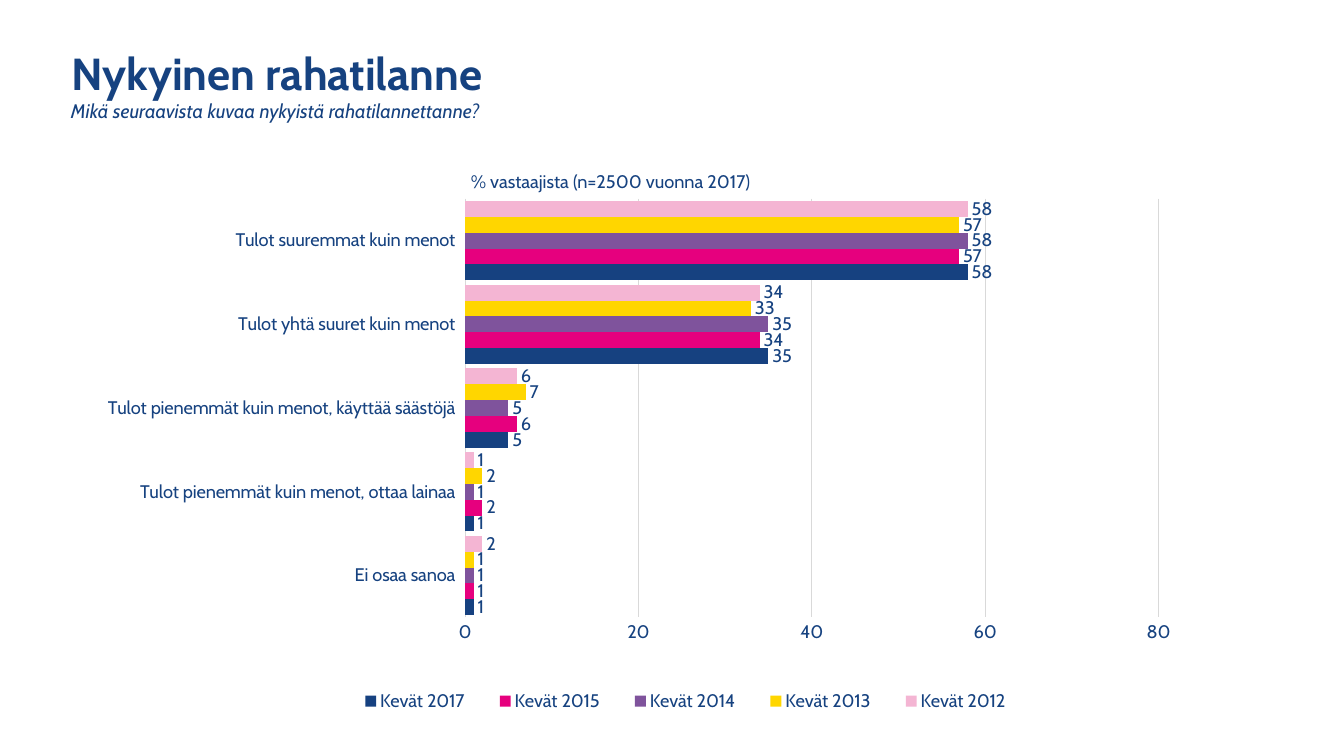
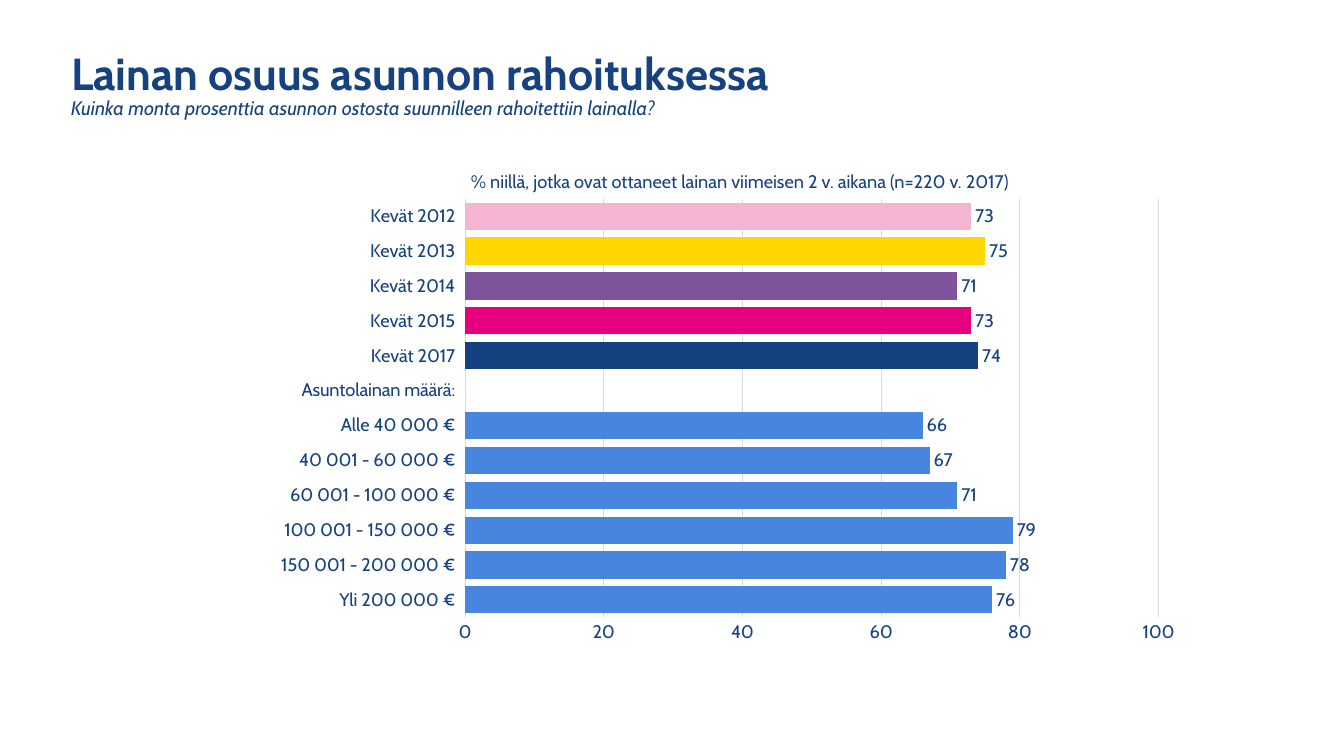
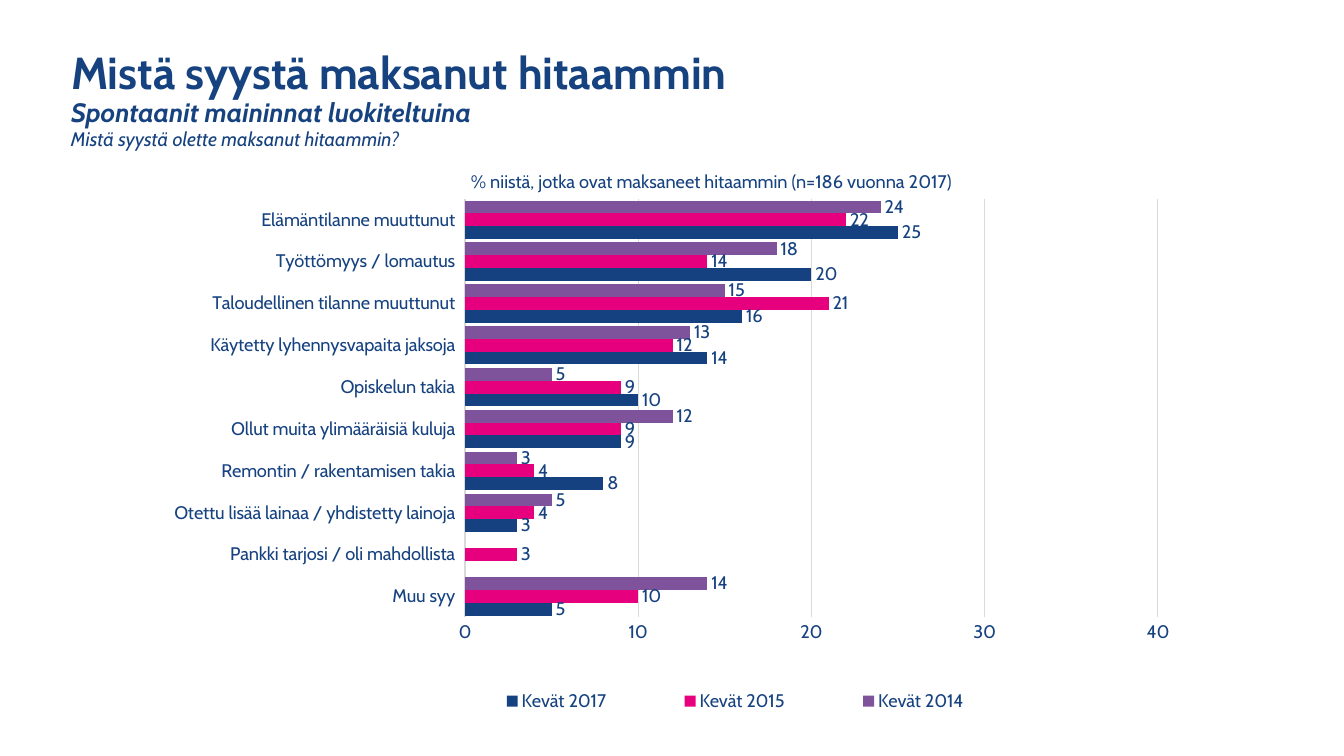
import pptx
import pptx.util
import pptx.dml.color
import pptx.chart.data
import pptx.enum.chart
import pptx.enum.text
import pptx.oxml
import pptx.oxml.ns

SLIDE_WIDTH, SLIDE_HEIGHT = 1344, 756
EMU_PER_PX = 12192000 / SLIDE_WIDTH
FONT = "Cabin"
NAVY = "164280"
GRID = "D9D9D9"
LIGHT_BLUE = "4785DF"
YEAR_COLORS = {
    "Kevät 2012": "F4B5D3",
    "Kevät 2013": "FFD600",
    "Kevät 2014": "7F539C",
    "Kevät 2015": "E6007E",
    "Kevät 2017": "164180",
}


def px(length):
    return pptx.util.Emu(round(length * EMU_PER_PX))


def color(value):
    return pptx.dml.color.RGBColor.from_string(value)


def set_font(font, size, bold=False, italic=False):
    font.name = FONT
    font.size = pptx.util.Pt(size)
    font.bold = bold
    font.italic = italic
    font.color.rgb = color(NAVY)


def write(paragraph, text, size=13, bold=False, italic=False, spacing=1.0):
    paragraph.alignment = pptx.enum.text.PP_ALIGN.LEFT
    paragraph.line_spacing = spacing
    paragraph.space_before = pptx.util.Pt(0)
    run = paragraph.add_run()
    run.text = text
    set_font(run.font, size, bold, italic)


def set_layout(element, x, y, width, height, inner=False):
    for previous in element.findall(pptx.oxml.ns.qn("c:layout")):
        element.remove(previous)
    target = '<c:layoutTarget val="inner"/>' if inner else ""
    layout = pptx.oxml.parse_xml(
        f'<c:layout {pptx.oxml.ns.nsdecls("c")}><c:manualLayout>{target}'
        '<c:xMode val="edge"/><c:yMode val="edge"/>'
        f'<c:x val="{x}"/><c:y val="{y}"/><c:w val="{width}"/><c:h val="{height}"/>'
        "</c:manualLayout></c:layout>"
    )
    position = 0 if inner else 1
    element.insert(position, layout)


class Deck:
    def __init__(self):
        self.presentation = pptx.Presentation()
        self.presentation.slide_width = px(SLIDE_WIDTH)
        self.presentation.slide_height = px(SLIDE_HEIGHT)
        self.slide = None

    def new_slide(self):
        self.slide = self.presentation.slides.add_slide(self.presentation.slide_layouts[5])

    def frame(self, shape, box, left_inset=13, wrap=True):
        shape.left, shape.top, shape.width, shape.height = map(px, box)
        frame = shape.text_frame
        frame.margin_left, frame.margin_right = px(left_inset), px(13)
        frame.margin_top = frame.margin_bottom = px(7)
        frame.vertical_anchor = pptx.enum.text.MSO_ANCHOR.TOP
        frame.auto_size = pptx.enum.text.MSO_AUTO_SIZE.SHAPE_TO_FIT_TEXT
        frame.word_wrap = wrap
        return frame

    def title(self, text, width, second_line=None):
        box = (58, 44, width, 92) if second_line else (58, 39, width, 68)
        spacing = 0.9 if second_line else 1.0
        frame = self.frame(self.slide.shapes.title, box, wrap=False)
        write(frame.paragraphs[0], text, size=32, bold=True, spacing=spacing)
        if second_line:
            write(frame.add_paragraph(), second_line, size=19, bold=True, italic=True, spacing=spacing)

    def text_box(self, text, box, left_inset=13, **text_format):
        shape = self.slide.shapes.add_textbox(0, 0, 0, 0)
        write(self.frame(shape, box, left_inset).paragraphs[0], text, **text_format)

    def question(self, text, top=92, spacing=1.0):
        self.text_box(text, (58, top, 1228, 37), size=14, italic=True, spacing=spacing)

    def base_note(self, text):
        self.text_box(text, (466, 163, 868, 35), left_inset=5)

    def bar_chart(self, categories, series, maximum, step, left=0, plot=(0.346, 0.516),
                  legend=None, number_format="General", point_colors=()):
        data = pptx.chart.data.CategoryChartData(number_format=number_format)
        data.categories = categories
        for name, values in series.items():
            data.add_series(name, values)
        chart = self.slide.shapes.add_chart(
            pptx.enum.chart.XL_CHART_TYPE.BAR_CLUSTERED,
            px(left), px(145), px(SLIDE_WIDTH - left), px(598), data,
        ).chart
        set_font(chart.font, 13)
        chart.has_title = False
        self.axes(chart, maximum, step, number_format)
        self.bars(chart.plots[0], number_format, point_colors)
        plot_left, plot_width = plot
        set_layout(chart.plots[0]._element.getparent(), plot_left, 0.09, plot_width, 0.7, inner=True)
        chart.has_legend = legend is not None
        if legend:
            chart.legend.position = pptx.enum.chart.XL_LEGEND_POSITION.BOTTOM
            chart.legend.include_in_layout = False
            set_font(chart.legend.font, 13)
            set_layout(chart.legend._element, *legend)

    def axes(self, chart, maximum, step, number_format):
        category_axis, value_axis = chart.category_axis, chart.value_axis
        for axis in (category_axis, value_axis):
            axis.major_tick_mark = axis.minor_tick_mark = pptx.enum.chart.XL_TICK_MARK.NONE
            set_font(axis.tick_labels.font, 13)
        category_axis.reverse_order = True
        category_axis.tick_label_position = pptx.enum.chart.XL_TICK_LABEL_POSITION.LOW
        category_axis.has_major_gridlines = False
        category_axis.format.line.color.rgb = color(GRID)
        category_axis.format.line.width = pptx.util.Pt(0.25)
        value_axis._element.find(pptx.oxml.ns.qn("c:crosses")).set("val", "max")
        value_axis.minimum_scale, value_axis.maximum_scale = 0, maximum
        value_axis.major_unit = step
        value_axis.format.line.fill.background()
        value_axis.has_major_gridlines = True
        value_axis.major_gridlines.format.line.color.rgb = color(GRID)
        value_axis.major_gridlines.format.line.width = pptx.util.Pt(0.75)
        value_axis.tick_labels.number_format = number_format
        value_axis.tick_labels.number_format_is_linked = False

    def bars(self, plot, number_format, point_colors):
        plot.gap_width = 28
        plot.overlap = 0
        plot.vary_by_categories = False
        plot.has_data_labels = True
        labels = plot.data_labels
        labels.show_value = True
        labels.position = pptx.enum.chart.XL_LABEL_POSITION.OUTSIDE_END
        labels.number_format = number_format
        labels.number_format_is_linked = False
        set_font(labels.font, 13)
        for series in plot.series:
            series.invert_if_negative = False
            series.format.fill.solid()
            series.format.fill.fore_color.rgb = color(YEAR_COLORS.get(series.name, LIGHT_BLUE))
            for index, point_color in enumerate(point_colors):
                fill = series.points[index].format.fill
                fill.solid()
                fill.fore_color.rgb = color(point_color)


def main():
    deck = Deck()

    deck.new_slide()
    deck.bar_chart(
        ["Tulot suuremmat kuin menot", "Tulot yhtä suuret kuin menot",
         "Tulot pienemmät kuin menot, käyttää säästöjä",
         "Tulot pienemmät kuin menot, ottaa lainaa", "Ei osaa sanoa"],
        {"Kevät 2012": (58, 34, 6, 1, 2),
         "Kevät 2013": (57, 33, 7, 2, 1),
         "Kevät 2014": (58, 35, 5, 1, 1),
         "Kevät 2015": (57, 34, 6, 2, 1),
         "Kevät 2017": (58, 35, 5, 1, 1)},
        maximum=80, step=20, legend=(0.25, 0.9, 0.52, 0.06),
    )
    deck.title("Nykyinen rahatilanne", 481)
    deck.question("Mikä seuraavista kuvaa nykyistä rahatilannettanne?")
    deck.base_note("% vastaajista (n=2500 vuonna 2017)")

    deck.new_slide()
    deck.bar_chart(
        [*YEAR_COLORS, "Asuntolainan määrä:", "Alle 40 000 €", "40 001 - 60 000 €",
         "60 001 - 100 000 €", "100 001 - 150 000 €", "150 001 - 200 000 €", "Yli 200 000 €"],
        {"Series 1": (73, 75, 71, 73, 74, None, 66, 67, 71, 79, 78, 76)},
        maximum=100, step=20, number_format="#,##0", point_colors=YEAR_COLORS.values(),
    )
    deck.title("Lainan osuus asunnon rahoituksessa", 835)
    deck.question("Kuinka monta prosenttia asunnon ostosta suunnilleen rahoitettiin lainalla?", spacing=0.9)
    deck.base_note("% niillä, jotka ovat ottaneet lainan viimeisen 2 v. aikana (n=220 v. 2017)")

    deck.new_slide()
    deck.bar_chart(
        ["Elämäntilanne muuttunut", "Työttömyys / lomautus", "Taloudellinen tilanne muuttunut",
         "Käytetty lyhennysvapaita jaksoja", "Opiskelun takia", "Ollut muita ylimääräisiä kuluja",
         "Remontin / rakentamisen takia", "Otettu lisää lainaa / yhdistetty lainoja",
         "Pankki tarjosi / oli mahdollista", "Muu syy"],
        {"Kevät 2014": (24, 18, 15, 13, 5, 12, 3, 5, None, 14),
         "Kevät 2015": (22, 14, 21, 12, 9, 9, 4, 4, 3, 10),
         "Kevät 2017": (25, 20, 16, 14, 10, 9, 8, 3, None, 5)},
        maximum=40, step=10, left=6, plot=(0.343, 0.518), legend=(0.32, 0.9, 0.45, 0.06),
    )
    deck.title("Mistä syystä maksanut hitaammin", 757, second_line="Spontaanit maininnat luokiteltuina")
    deck.question("Mistä syystä olette maksanut hitaammin?", top=120)
    deck.base_note("% niistä, jotka ovat maksaneet hitaammin (n=186 vuonna 2017)")

    deck.presentation.save("out.pptx")


if __name__ == "__main__":
    main()
